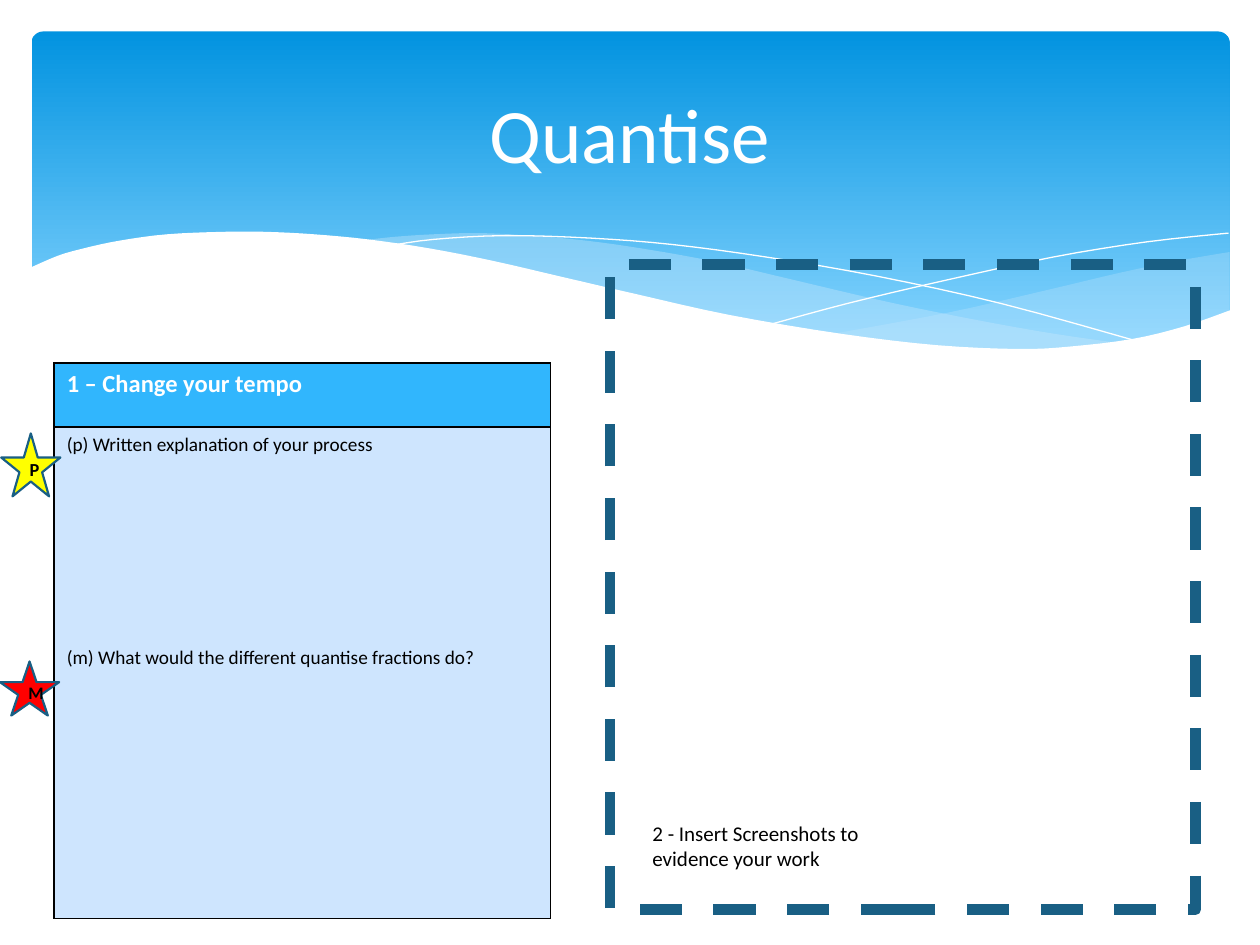
from lxml import etree
from pptx import Presentation
from pptx.dml.color import RGBColor
from pptx.enum import dml, shapes, text
from pptx.oxml import ns
from pptx.util import Inches, Pt

WHITE = RGBColor(0xFF, 0xFF, 0xFF)
BLACK = RGBColor(0, 0, 0)
SKY_TOP = RGBColor(0x02, 0x93, 0xE0)
SKY_BOTTOM = RGBColor(0x83, 0xD3, 0xFE)
MIST = RGBColor(0xC6, 0xE7, 0xFC)
HEADER_BLUE = RGBColor(0x31, 0xB6, 0xFD)
BODY_BLUE = RGBColor(0xCE, 0xE5, 0xFE)
NAVY = RGBColor(0x19, 0x5F, 0x84)
YELLOW = RGBColor(0xFF, 0xFF, 0)
RED = RGBColor(0xFF, 0, 0)

RIGHT_CREST = [(9.76, 2), (9.35, 2.07), (8.91, 2.16), (8.32, 2.3), (7.53, 2.48), (6.61, 2.65)]
RIGHT_TROUGH = [(6.61, 2.65), (7.05, 2.71), (7.57, 2.76), (8.03, 2.78), (8.54, 2.76),
                (8.97, 2.7), (9.35, 2.62), (9.76, 2.47)]
MIDDLE_CREST = [(8.93, 2.73), (8.37, 2.65), (7.75, 2.54), (7.06, 2.4), (6.29, 2.22),
                (5.69, 2.08), (5.14, 1.98), (4.65, 1.91), (4.2, 1.87), (3.8, 1.85),
                (3.44, 1.86), (3.13, 1.88), (2.86, 1.91)]
MIDDLE_TROUGH = [(2.86, 1.91), (3.42, 1.99), (4.04, 2.11), (4.49, 2.22), (5.3, 2.4),
                 (6.01, 2.55), (6.65, 2.66), (7.22, 2.74), (7.73, 2.77), (8.18, 2.78),
                 (8.57, 2.77), (8.93, 2.73)]
FALLING_LINE = [(3.09, 1.95), (3.44, 1.9), (4.01, 1.87), (4.69, 1.89), (5.33, 1.94),
                (6.08, 2.04), (6.95, 2.19), (7.95, 2.41), (9.07, 2.72)]
RISING_LINE = [(6.13, 2.57), (6.72, 2.41), (7.48, 2.23), (8.36, 2.04), (9.1, 1.92), (9.75, 1.85)]
FRONT_CREST = [(9.77, 2.46), (9.4, 2.59), (8.99, 2.69), (8.5, 2.75), (8.09, 2.77),
               (7.44, 2.74), (6.68, 2.65), (5.79, 2.5), (5.03, 2.33), (4.47, 2.2),
               (3.91, 2.07), (3.4, 1.97), (2.92, 1.9), (2.5, 1.86), (2.11, 1.84),
               (1.77, 1.84), (1.32, 1.86), (0.95, 1.91), (0.67, 1.97), (0.46, 2.03),
               (0.23, 2.13)]
FRONT_BASE = [(0.23, 3.29), (9.77, 3.29)]


def smooth(points, steps=4):
    padded = [points[0], *points, points[-1]]
    curve = []
    for a, b, c, d in zip(padded, padded[1:], padded[2:], padded[3:]):
        for step in range(steps):
            t = step / steps
            curve.append(tuple(
                q + t * (r - p) / 2 + t**2 * (2 * p - 5 * q + 4 * r - s) / 2
                + t**3 * (3 * q - p - 3 * r + s) / 2
                for p, q, r, s in zip(a, b, c, d)))
    return curve + [points[-1]]


def add_outline(page, points, close):
    corners = [(Inches(x), Inches(y)) for x, y in points]
    builder = page.shapes.build_freeform(*corners[0])
    builder.add_line_segments(corners[1:], close=close)
    outline = builder.convert_to_shape()
    outline.shadow.inherit = False
    return outline


def add_wave(page, points, color, opacity=100):
    wave = add_outline(page, points, True)
    wave.fill.solid()
    wave.fill.fore_color.rgb = color
    wave.line.fill.background()
    if opacity < 100:
        tint = wave.element.spPr.find(ns.qn("a:solidFill"))[0]
        etree.SubElement(tint, ns.qn("a:alpha"), val=str(opacity * 1000))


def add_hairline(page, points):
    curve = add_outline(page, smooth(points), False)
    curve.fill.background()
    curve.line.color.rgb = WHITE
    curve.line.width = Pt(0)


def add_preset(page, kind, left, top, width, height):
    shape = page.shapes.add_shape(
        kind, Inches(left), Inches(top), Inches(width), Inches(height))
    shape.shadow.inherit = False
    return shape


def add_backdrop(page):
    sky = add_preset(page, shapes.MSO_SHAPE.ROUNDED_RECTANGLE, 0.25, 0.25, 9.51, 2.7)
    sky.adjustments[0] = 0.034
    sky.line.fill.background()
    sky.fill.gradient()
    sky.fill.gradient_angle = 270
    for stop, position, color in zip(
            sky.fill.gradient_stops, (0, 0.9), (SKY_TOP, SKY_BOTTOM)):
        stop.position = position
        stop.color.rgb = color
    add_wave(page, smooth(RIGHT_CREST) + smooth(RIGHT_TROUGH), MIST, 29)
    add_wave(page, smooth(MIDDLE_CREST) + smooth(MIDDLE_TROUGH), MIST, 40)
    add_hairline(page, FALLING_LINE)
    add_hairline(page, RISING_LINE)
    add_wave(page, smooth(FRONT_CREST) + FRONT_BASE, WHITE)


def write(para, words, size, color, bold=False, align=None):
    para.text = words
    para.alignment = align
    para.font.name = "Calibri"
    para.font.size = Pt(size)
    para.font.bold = bold
    para.font.color.rgb = color


def place_title(page, words):
    title = page.shapes.title
    title.element.getparent().append(title.element)
    title.left, title.top = Inches(0.5), Inches(0.37)
    title.width, title.height = Inches(9), Inches(1.37)
    title.text_frame.vertical_anchor = text.MSO_ANCHOR.MIDDLE
    write(title.text_frame.paragraphs[0], words, 44, WHITE, align=text.PP_ALIGN.CENTER)


def style_cell(cell, color):
    properties = cell._tc.get_or_add_tcPr()
    for side in ("lnL", "lnR", "lnT", "lnB"):
        border = etree.SubElement(properties, ns.qn(f"a:{side}"), w=str(Pt(1)))
        paint = etree.SubElement(border, ns.qn("a:solidFill"))
        etree.SubElement(paint, ns.qn("a:srgbClr"), val=str(BLACK))
    cell.fill.solid()
    cell.fill.fore_color.rgb = color


def add_task_table(page, heading, questions):
    table = page.shapes.add_table(
        2, 1, Inches(0.43), Inches(2.88), Inches(3.94), Inches(4.41)).table
    table.first_row = table.horz_banding = False
    for row, height in zip(table.rows, (0.51, 3.9)):
        row.height = Inches(height)
    header, body = table.cell(0, 0), table.cell(1, 0)
    style_cell(header, HEADER_BLUE)
    style_cell(body, BODY_BLUE)
    write(header.text_frame.paragraphs[0], heading, 14, WHITE, bold=True)
    first, second = body.text_frame.paragraphs[0], body.text_frame.add_paragraph()
    for para, question in zip((first, second), questions):
        write(para, question, 11, BLACK)
    second.space_before = Pt(108)


def add_evidence_area(page, words):
    frame = add_preset(page, shapes.MSO_SHAPE.RECTANGLE, 4.84, 2.1, 4.65, 5.12)
    frame.fill.background()
    frame.line.color.rgb = NAVY
    frame.line.width = Pt(6)
    frame.line.dash_style = dml.MSO_LINE.DASH
    box = page.shapes.add_textbox(Inches(5.08), Inches(6.46), Inches(2.36), Inches(0.5))
    box.text_frame.word_wrap = True
    write(box.text_frame.paragraphs[0], words, 12, BLACK)


def add_star(page, letter, size, color, left, top, height):
    star = add_preset(page, shapes.MSO_SHAPE.STAR_5_POINT, left, top, 0.47, height)
    star.fill.solid()
    star.fill.fore_color.rgb = color
    star.line.color.rgb = NAVY
    star.line.width = Pt(1.25)
    star.text_frame.vertical_anchor = text.MSO_ANCHOR.MIDDLE
    write(star.text_frame.paragraphs[0], letter, size, BLACK, True, text.PP_ALIGN.CENTER)


def main():
    deck = Presentation()
    deck.slide_width, deck.slide_height = Inches(10), Inches(7.5)
    page = deck.slides.add_slide(deck.slide_layouts[5])
    add_backdrop(page)
    place_title(page, "Quantise")
    add_task_table(page, "1 – Change your tempo", (
        "(p) Written explanation of your process",
        "(m) What would the different quantise fractions do?"))
    add_evidence_area(page, "2 - Insert Screenshots to evidence your work")
    add_star(page, "M", 10, RED, 0, 5.25, 0.43)
    add_star(page, "P", 10.5, YELLOW, 0.01, 3.44, 0.5)
    deck.save("out.pptx")


if __name__ == "__main__":
    main()
